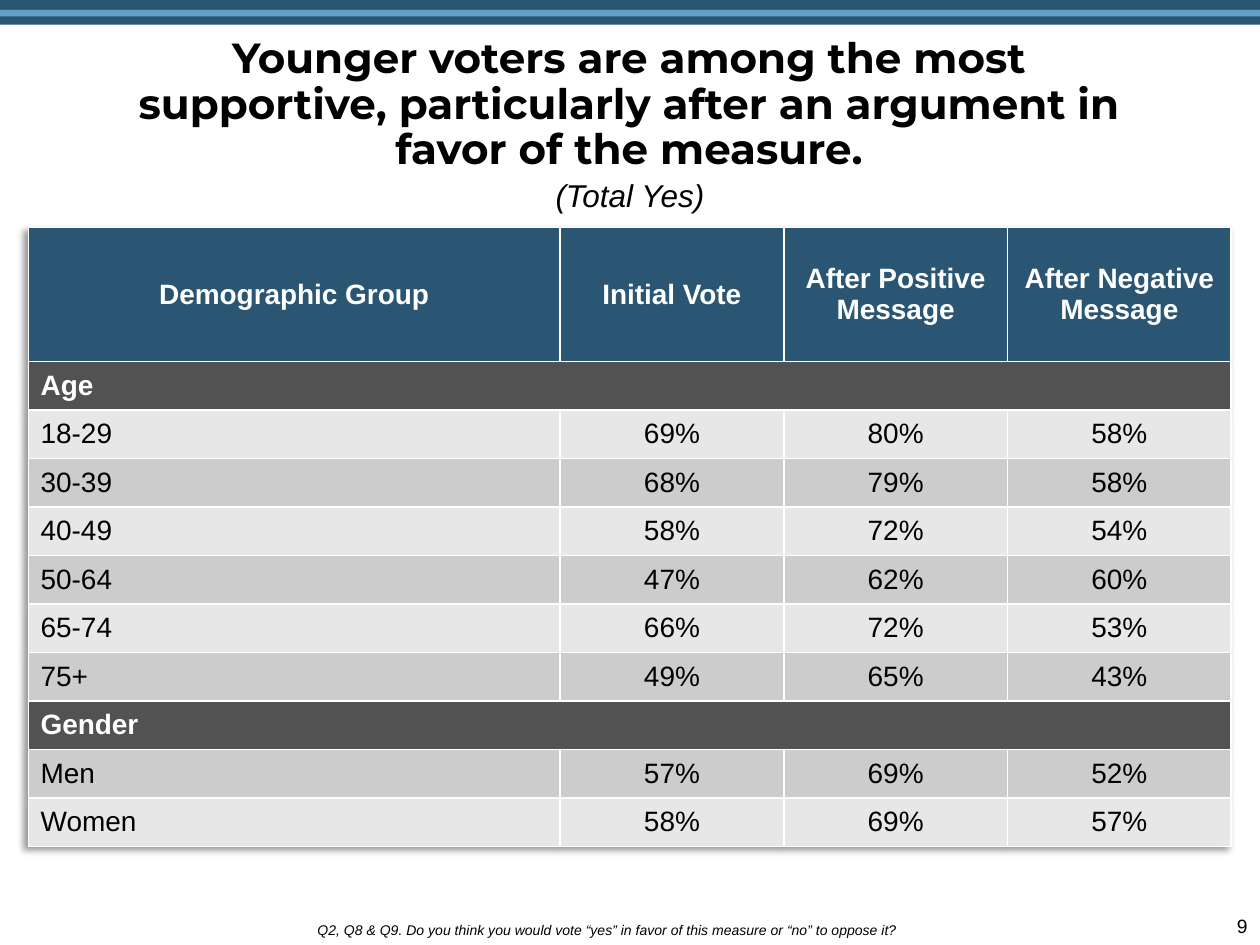
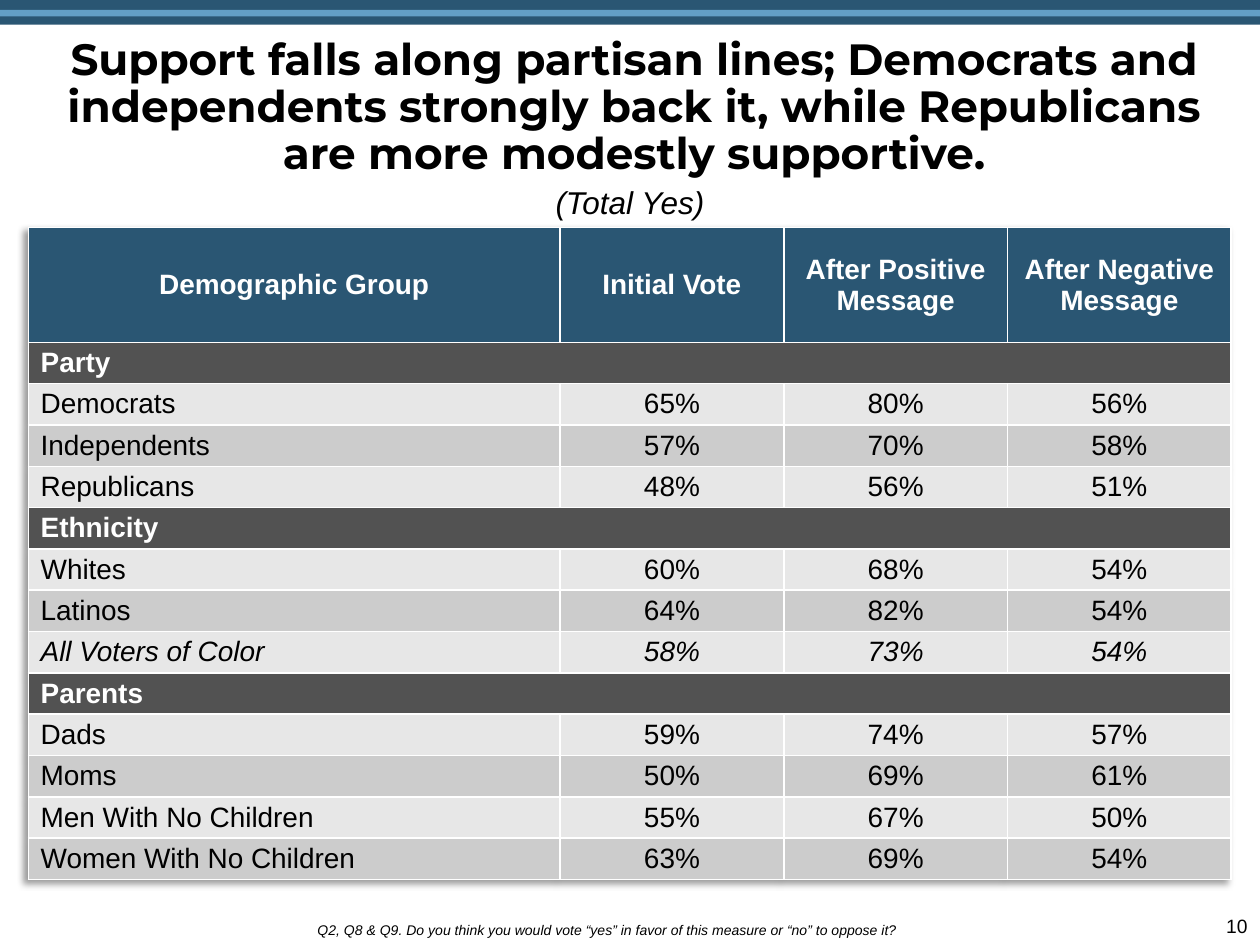
from dataclasses import dataclass

from lxml.etree import SubElement
from pptx import Presentation
from pptx.dml.color import RGBColor as RGB
from pptx.enum.shapes import MSO_SHAPE as SHAPE
from pptx.enum.text import MSO_ANCHOR as ANCHOR, PP_ALIGN as ALIGN
from pptx.oxml import parse_xml
from pptx.oxml.ns import nsdecls, qn
from pptx.util import Cm, Pt


@dataclass(frozen=True)
class Theme:
    navy: str = "2A5673"
    sky: str = "639FC6"
    charcoal: str = "525252"
    light: str = "E7E7E7"
    grey: str = "CCCCCC"
    white: str = "FFFFFF"
    black: str = "000000"
    heading: str = "Montserrat"
    body: str = "Arial"
    subtitle_size: float = 18
    table_size: float = 16
    page_size: float = 11
    note_size: float = 8


T = Theme()
WIDTH, HEIGHT = 25.4, 19.05
HEADERS = ("Demographic Group", "Initial Vote", "After Positive Message", "After Negative Message")
COLUMNS = (10.72, 4.51, 4.51, 4.51)
SUBTITLE = "(Total Yes)"
QUESTION = "Q2, Q8 & Q9. Do you think you would vote “yes” in favor of this measure or “no” to oppose it?"
ITALIC_ROWS = {"All Voters of Color"}

AGE_GENDER = {
    "Age": [
        ("18-29", 69, 80, 58),
        ("30-39", 68, 79, 58),
        ("40-49", 58, 72, 54),
        ("50-64", 47, 62, 60),
        ("65-74", 66, 72, 53),
        ("75+", 49, 65, 43),
    ],
    "Gender": [
        ("Men", 57, 69, 52),
        ("Women", 58, 69, 57),
    ],
}
PARTY_ETHNICITY_PARENTS = {
    "Party": [
        ("Democrats", 65, 80, 56),
        ("Independents", 57, 70, 58),
        ("Republicans", 48, 56, 51),
    ],
    "Ethnicity": [
        ("Whites", 60, 68, 54),
        ("Latinos", 64, 82, 54),
        ("All Voters of Color", 58, 73, 54),
    ],
    "Parents": [
        ("Dads", 59, 74, 57),
        ("Moms", 50, 69, 61),
        ("Men With No Children", 55, 67, 50),
        ("Women With No Children", 63, 69, 54),
    ],
}


def style(p, size, color=T.black, font=T.body, bold=False, italic=False, align=ALIGN.LEFT):
    p.alignment = align
    f = p.font
    f.name, f.size, f.bold, f.italic = font, Pt(size), bold, italic
    f.color.rgb = RGB.from_string(color)


def add_text(s, box, text, size, anchor=ANCHOR.TOP, spacing=None, **look):
    tf = s.shapes.add_textbox(*map(Cm, box)).text_frame
    tf.word_wrap = True
    tf.vertical_anchor = anchor
    p = tf.paragraphs[0]
    p.text = text
    if spacing:
        p.line_spacing = spacing
    style(p, size, **look)


def add_band(s, box):
    left, top, width, height = box
    stripe = (left, top + 0.4 * height, width, 0.26 * height)
    for place, color in ((box, T.navy), (stripe, T.sky)):
        sp = s.shapes.add_shape(SHAPE.RECTANGLE, *map(Cm, place))
        sp.shadow.inherit = False
        sp.fill.solid()
        sp.fill.fore_color.rgb = RGB.from_string(color)
        sp.line.fill.background()


def add_footer(s, box, page):
    left, top, width, height = box
    add_text(s, (left + 6.15, top, 18.5, height), QUESTION, T.note_size,
             anchor=ANCHOR.BOTTOM, spacing=0.9, italic=True)
    add_text(s, (left + width - 3.76, top + 0.38, 3.76, height - 0.38), str(page), T.page_size,
             align=ALIGN.RIGHT)


def set_borders(cell, sides):
    tcPr = cell._tc.get_or_add_tcPr()
    for side in "LRTB":
        ln = SubElement(tcPr, qn(f"a:ln{side}"), w=str(Pt(1)))
        if side in sides:
            SubElement(SubElement(ln, qn("a:solidFill")), qn("a:srgbClr"), val=T.white)
        else:
            SubElement(ln, qn("a:noFill"))


def fill_cell(cell, text, fill, sides="LRTB", indent=0.03, **look):
    set_borders(cell, sides)
    cell.fill.solid()
    cell.fill.fore_color.rgb = RGB.from_string(fill)
    cell.margin_left, cell.margin_right = Cm(indent), Cm(0.03)
    cell.margin_top = cell.margin_bottom = 0
    cell.vertical_anchor = ANCHOR.MIDDLE
    p = cell.text_frame.paragraphs[0]
    p.text = text
    style(p, T.table_size, **look)


def add_shadow(table):
    table._tbl.tblPr.insert(0, parse_xml(
        f'<a:effectLst {nsdecls("a")}><a:outerShdw blurRad="{Cm(0.13)}" dist="{Cm(0.1)}" '
        'dir="8100000" algn="tr" rotWithShape="0"><a:prstClr val="black">'
        '<a:alpha val="40000"/></a:prstClr></a:outerShdw></a:effectLst>'))


def add_vote_table(s, box, header_height, groups):
    rows = []
    for group, members in groups.items():
        rows += [(group,), *members]
    table = s.shapes.add_table(len(rows) + 1, len(HEADERS), *map(Cm, box)).table
    table.first_row = table.horz_banding = False
    add_shadow(table)
    for column, width in zip(table.columns, COLUMNS):
        column.width = Cm(width)
    row_height = (box[3] - header_height) / len(rows)
    for i, row in enumerate(table.rows):
        row.height = Cm(row_height if i else header_height)

    for j, text in enumerate(HEADERS):
        fill_cell(table.cell(0, j), text, T.navy, color=T.white, bold=True, align=ALIGN.CENTER)
    for i, (label, *votes) in enumerate(rows, 1):
        if not votes:
            for j, sides in enumerate(("LTB", "TB", "TB", "RTB")):
                fill_cell(table.cell(i, j), "" if j else label, T.charcoal, sides,
                          indent=0.25, color=T.white, bold=True)
            continue
        fill = T.grey if i % 2 else T.light
        italic = label in ITALIC_ROWS
        fill_cell(table.cell(i, 0), label, fill, indent=0.25, italic=italic)
        for j, vote in enumerate(votes, 1):
            fill_cell(table.cell(i, j), f"{vote}%", fill, italic=italic, align=ALIGN.CENTER)


def add_vote_slide(prs, page, title, title_box, title_size, subtitle_top, table_height,
                   header_height, groups):
    s = prs.slides.add_slide(prs.slide_layouts[6])
    add_band(s, (0, 0, WIDTH, 0.5))
    add_text(s, title_box, title, title_size, spacing=0.9, font=T.heading, bold=True,
             align=ALIGN.CENTER)
    add_footer(s, (0, 17.93, WIDTH, HEIGHT - 17.93), page)
    add_vote_table(s, (0.57, 4.59, sum(COLUMNS), table_height), header_height, groups)
    add_text(s, (9.82, subtitle_top, 5.76, 1.02), SUBTITLE, T.subtitle_size,
             anchor=ANCHOR.MIDDLE, italic=True, align=ALIGN.CENTER)


def main():
    prs = Presentation()
    prs.slide_width, prs.slide_height = Cm(WIDTH), Cm(HEIGHT)
    add_vote_slide(
        prs, 9,
        "Younger voters are among the most supportive, particularly after an argument "
        "in favor of the measure.",
        (2.23, 0.63, 20.9, 3.18), 24, 3.43, 12.47, 2.7, AGE_GENDER)
    add_vote_slide(
        prs, 10,
        "Support falls along partisan lines; Democrats and independents strongly back it, "
        "while Republicans are more modestly supportive.",
        (0.96, 0.63, 23.65, 3.18), 25, 3.56, 13.15, 2.31, PARTY_ETHNICITY_PARENTS)
    prs.save("out.pptx")


if __name__ == "__main__":
    main()
